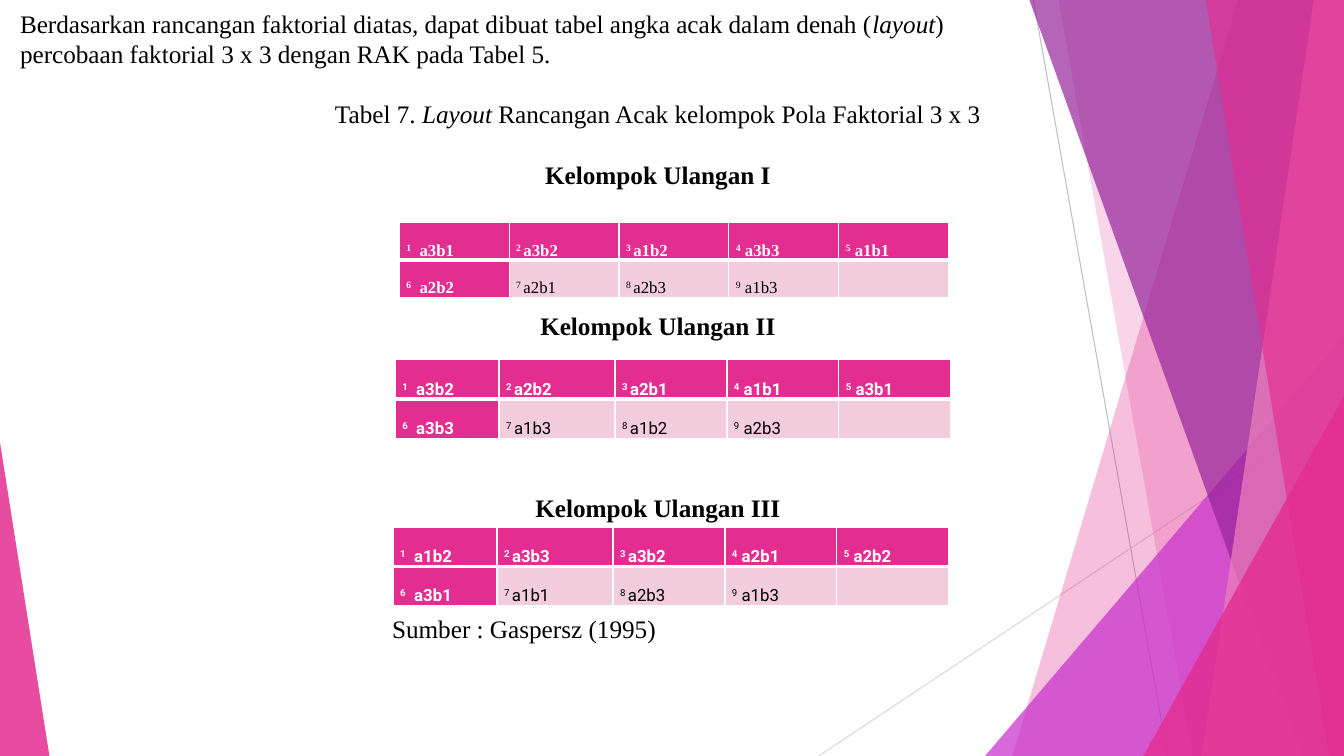
from lxml import etree
from pptx import Presentation
from pptx.dml.color import RGBColor
from pptx.enum.shapes import MSO_CONNECTOR, MSO_SHAPE
from pptx.enum.text import MSO_ANCHOR, PP_ALIGN
from pptx.oxml.ns import qn
from pptx.util import Inches, Pt

STRAIGHT = MSO_CONNECTOR.STRAIGHT
TRIANGLE = MSO_SHAPE.ISOSCELES_TRIANGLE
LEFT, CENTER, JUSTIFY = PP_ALIGN.LEFT, PP_ALIGN.CENTER, PP_ALIGN.JUSTIFY
MIDDLE = MSO_ANCHOR.MIDDLE

COLORS = {
    "pink": "E32D91", "light pink": "EE81BD", "pale pink": "F4CDDC",
    "magenta": "C830CC", "purple": "962499",
    "gray": "BFBFBF", "light gray": "D9D9D9",
    "white": "FFFFFF", "black": "000000",
}
SERIF, SANS = "Times New Roman", "Roboto"
WIDTH, HEIGHT = 13.33, 7.5
LINE_PITCH = 21.6


def add_run(paragraph, text, font=SERIF, size=18, color="black",
            bold=False, italic=False, raised=False, tracking=0):
    """Append formatted text; raised makes it superscript, tracking is in points."""
    run = paragraph.add_run()
    run.text = text
    run.font.name = font
    run.font.size = Pt(size)
    run.font.bold = bold
    run.font.italic = italic
    run.font.color.rgb = RGBColor.from_string(COLORS[color])
    properties = run.font._element
    if raised:
        properties.set("baseline", "30000")
    if tracking:
        properties.set("spc", str(tracking * 100))


def paint(shape, color, opacity):
    """Give a shape a see-through fill without line or shadow."""
    shape.shadow.inherit = False
    shape.line.fill.background()
    shape.fill.solid()
    shape.fill.fore_color.rgb = RGBColor.from_string(COLORS[color])
    fill_color = shape._element.spPr.find(qn("a:solidFill"))[0]
    etree.SubElement(fill_color, qn("a:alpha"), val=str(opacity * 1000))


presentation = Presentation()
presentation.slide_width = Inches(WIDTH)
presentation.slide_height = Inches(HEIGHT)
slide = presentation.slides.add_slide(presentation.slide_layouts[6])
shapes = slide.shapes

# Background lines
for x1, y1, x2, y2, color in [
    (10.25, 0, 11.58, HEIGHT, "gray"),
    (WIDTH, 4.03, 8.12, HEIGHT, "light gray"),
]:
    line = shapes.add_connector(STRAIGHT, Inches(x1), Inches(y1), Inches(x2), Inches(y2))
    line.line.color.rgb = RGBColor.from_string(COLORS[color])
    line.line.width = Pt(0.75)
    etree.SubElement(line._element.spPr, qn("a:effectLst"))

# Background facets: bands are (top x, bottom x), triangles are (left, top, width, apex)
facets = [
    ("band", (12.28, 10.04), "pink", 30),
    ("band", (10.5, 11.83), "pink", 20),
    ("triangle", (9.77, 3.33, 3.56, 1), "magenta", 72),
    ("band", (10.21, 12.91), "purple", 70),
    ("band", (13.03, 11.92), "light pink", 70),
    ("band", (11.96, 13.18), "pink", 65),
    ("triangle", (11.34, 3.93, 1.99, 1), "pink", 80),
    ("triangle", (0, 4.39, 0.49, 0), "pink", 85),
]
for kind, geometry, color, opacity in facets:
    if kind == "band":
        top_x, bottom_x = geometry
        builder = shapes.build_freeform(Inches(top_x), 0)
        corners = [(WIDTH, 0), (WIDTH, HEIGHT), (bottom_x, HEIGHT)]
        builder.add_line_segments([(Inches(x), Inches(y)) for x, y in corners])
        facet = builder.convert_to_shape()
    else:
        left, top, width, apex = geometry
        facet = shapes.add_shape(TRIANGLE, Inches(left), Inches(top),
                                 Inches(width), Inches(HEIGHT - top))
        facet.adjustments[0] = apex
    paint(facet, color, opacity)

# Layout tables: left, top, row height, font, column widths, treatments in order
equal_columns = [1.09] * 5
mixed_columns = [1.03, 1.15, 1.11, 1.11, 1.11]
groups = [
    (3.96, 2.21, 0.37, SERIF, equal_columns,
     "a3b1 a3b2 a1b2 a3b3 a1b1 a2b2 a2b1 a2b3 a1b3"),
    (3.92, 3.57, 0.39, SANS, mixed_columns,
     "a3b2 a2b2 a2b1 a1b1 a3b1 a3b3 a1b3 a1b2 a2b3"),
    (3.9, 5.23, 0.39, SANS, mixed_columns,
     "a1b2 a3b3 a3b2 a2b1 a2b2 a3b1 a1b1 a2b3 a1b3"),
]
for left, top, row_height, font, columns, treatments in groups:
    table = shapes.add_table(2, 5, Inches(left), Inches(top),
                             Inches(sum(columns)), Inches(2 * row_height)).table
    for column, width in zip(table.columns, columns):
        column.width = Inches(width)
    for row in table.rows:
        row.height = Inches(row_height)
    codes = treatments.split()
    for index in range(10):
        row, column = divmod(index, 5)
        heading = row == 0 or column == 0
        cell = table.cell(row, column)
        cell.margin_left = cell.margin_right = Inches(0.07)
        cell.margin_top = cell.margin_bottom = 0
        cell_properties = cell._tc.get_or_add_tcPr()
        middle_edge = "lnB" if row == 0 else "lnT"
        for side in ("lnL", "lnR", "lnT", "lnB"):
            border_width = Pt(3 if side == middle_edge else 1)
            border = etree.SubElement(cell_properties, qn(f"a:{side}"), w=str(border_width))
            border_fill = etree.SubElement(border, qn("a:solidFill"))
            etree.SubElement(border_fill, qn("a:srgbClr"), val=COLORS["white"])
        cell.fill.solid()
        cell.fill.fore_color.rgb = RGBColor.from_string(
            COLORS["pink" if heading else "pale pink"])
        if index < len(codes):
            paragraph = cell.text_frame.paragraphs[0]
            paragraph.line_spacing = 2.0
            style = {"font": font, "size": 12, "bold": heading,
                     "color": "white" if heading else "black"}
            narrow_gap = column in (1, 2)
            number = str(index + 1)
            add_run(paragraph, number + " " if narrow_gap else number, raised=True,
                    tracking=3 if column == 0 else 0, **style)
            add_run(paragraph, codes[index] if narrow_gap else " " + codes[index], **style)

# Body text: alignment, lines of space before, left indent, runs
plain, italic, bold = {}, {"italic": True}, {"bold": True}
body = [
    (JUSTIFY, 0, 0, [
        ("Berdasarkan rancangan faktorial diatas, dapat dibuat tabel angka acak "
         "dalam denah (", plain), ("layout", italic), (") ", plain)]),
    (JUSTIFY, 0, 0, [("percobaan faktorial 3 x 3 dengan RAK pada Tabel 5. ", plain)]),
    (CENTER, 1, 0, [("Tabel 7. ", plain), ("Layout ", italic),
                    ("Rancangan Acak kelompok Pola Faktorial 3 x 3", plain)]),
    (CENTER, 1, 0, [("Kelompok Ulangan I", bold)]),
    (CENTER, 4, 0, [("Kelompok Ulangan II", bold)]),
    (CENTER, 5, 0, [("Kelompok Ulangan III", bold)]),
    (LEFT, 3, 3.69, [("Sumber : Gaspersz (1995)", plain)]),
]
text_box = shapes.add_textbox(Inches(0.1), 0, Inches(12.85), Inches(6.46))
frame = text_box.text_frame
frame.word_wrap = True
frame.vertical_anchor = MIDDLE
for position, (alignment, lines_before, indent, runs) in enumerate(body):
    paragraph = frame.add_paragraph() if position else frame.paragraphs[0]
    paragraph.alignment = alignment
    paragraph.line_spacing = Pt(LINE_PITCH)
    paragraph.space_before = Pt(LINE_PITCH * lines_before)
    if indent:
        paragraph._p.get_or_add_pPr().set("marL", str(Inches(indent)))
    for text, style in runs:
        add_run(paragraph, text, **style)

presentation.save("out.pptx")
